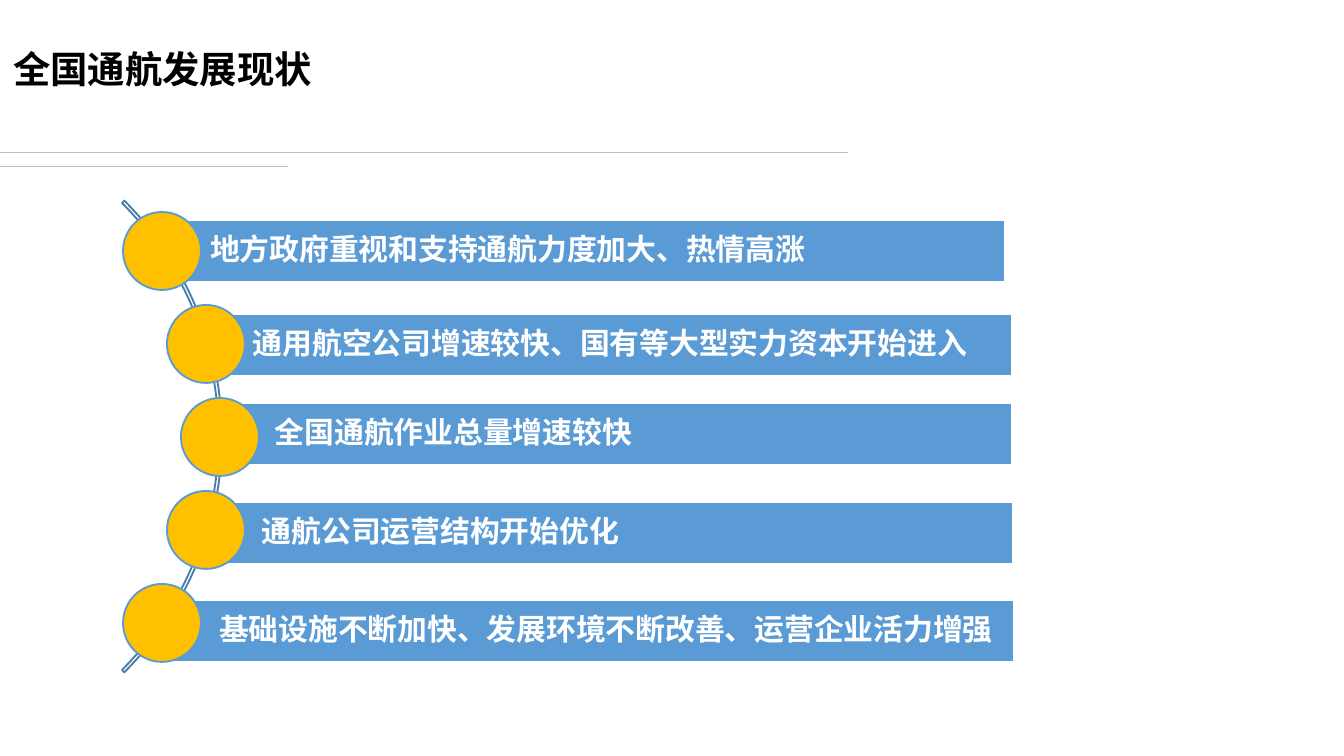
from pptx import Presentation
from pptx.dml.color import RGBColor
from pptx.enum.shapes import MSO_CONNECTOR, MSO_SHAPE
from pptx.enum.text import MSO_ANCHOR, MSO_AUTO_SIZE, PP_ALIGN
from pptx.oxml.ns import qn
from pptx.util import Pt
from lxml.etree import SubElement

PX = 914400 / 134.4
COLORS = {"black": "000000", "white": "FFFFFF", "rule": "BFBFBF",
          "arc": "497CAB", "bar": "5B9BD5", "dot": "FFC000"}


def emu(*lengths):
    return [round(length * PX) for length in lengths]


def write_text(shape, text, *, font, size, color, margins):
    frame = shape.text_frame
    frame.word_wrap = True
    frame.auto_size = MSO_AUTO_SIZE.NONE
    frame.vertical_anchor = MSO_ANCHOR.MIDDLE
    (frame.margin_left, frame.margin_top,
     frame.margin_right, frame.margin_bottom) = emu(*margins)
    paragraph = frame.paragraphs[0]
    paragraph.alignment = PP_ALIGN.LEFT
    paragraph.line_spacing = 0.9
    run = paragraph.add_run()
    run.text = text
    run.font.name = font
    run.font.size = Pt(size)
    run.font.bold = True
    run.font.color.rgb = RGBColor.from_string(COLORS[color])


presentation = Presentation()
presentation.slide_width, presentation.slide_height = emu(1344, 756)
slide = presentation.slides.add_slide(presentation.slide_layouts[5])
shapes = slide.shapes

title = shapes.title
title.left, title.top, title.width, title.height = emu(0, 40, 1159, 63)
write_text(title, "全国通航发展现状", font="Roboto", size=20, color="black",
           margins=(13, 7, 13, 7))

# Rules under the title
for right, y in ((848, 153), (288, 166)):
    rule = shapes.add_connector(MSO_CONNECTOR.STRAIGHT, *emu(0, y, right, y))
    rule.line.color.rgb = RGBColor.from_string(COLORS["rule"])
    rule.line.width = Pt(0.5)
    SubElement(rule._element.spPr, qn("a:effectLst"))

# Arc that carries the dots
arc = shapes.add_shape(MSO_SHAPE.BLOCK_ARC, *emu(-445, 103, 667, 667))
for index, value in enumerate((189, 27, 0.005)):
    arc.adjustments[index] = value
arc.shadow.inherit = False
arc.fill.background()
arc.line.color.rgb = RGBColor.from_string(COLORS["arc"])
arc.line.width = Pt(1)

# Each item: text, bar left, bar top, bar width, dot left
BAR_HEIGHT = 62
DOT_TOP, DOT_STEP, DOT_SIZE = 212, 93, 78
items = (
    ("地方政府重视和支持通航力度加大、热情高涨", 161, 220, 844, 123),
    ("通用航空公司增速较快、国有等大型实力资本开始进入", 204, 314, 808, 167),
    ("全国通航作业总量增速较快", 226, 403, 786, 181),
    ("通航公司运营结构开始优化", 213, 502, 800, 167),
    ("基础设施不断加快、发展环境不断改善、运营企业活力增强", 170, 600, 844, 123),
)
for index, (text, left, top, width, dot_left) in enumerate(items):
    bar = shapes.add_shape(MSO_SHAPE.RECTANGLE, *emu(left, top, width, BAR_HEIGHT))
    dot = shapes.add_shape(MSO_SHAPE.OVAL, *emu(
        dot_left, DOT_TOP + index * DOT_STEP, DOT_SIZE, DOT_SIZE))
    for shape, fill, line in ((bar, "bar", "white"), (dot, "dot", "bar")):
        shape.shadow.inherit = False
        shape.fill.solid()
        shape.fill.fore_color.rgb = RGBColor.from_string(COLORS[fill])
        shape.line.color.rgb = RGBColor.from_string(COLORS[line])
        shape.line.width = Pt(1)
    write_text(bar, text, font="Karla", size=16, color="white",
               margins=(49, 5, 5, 5))

presentation.save("out.pptx")
